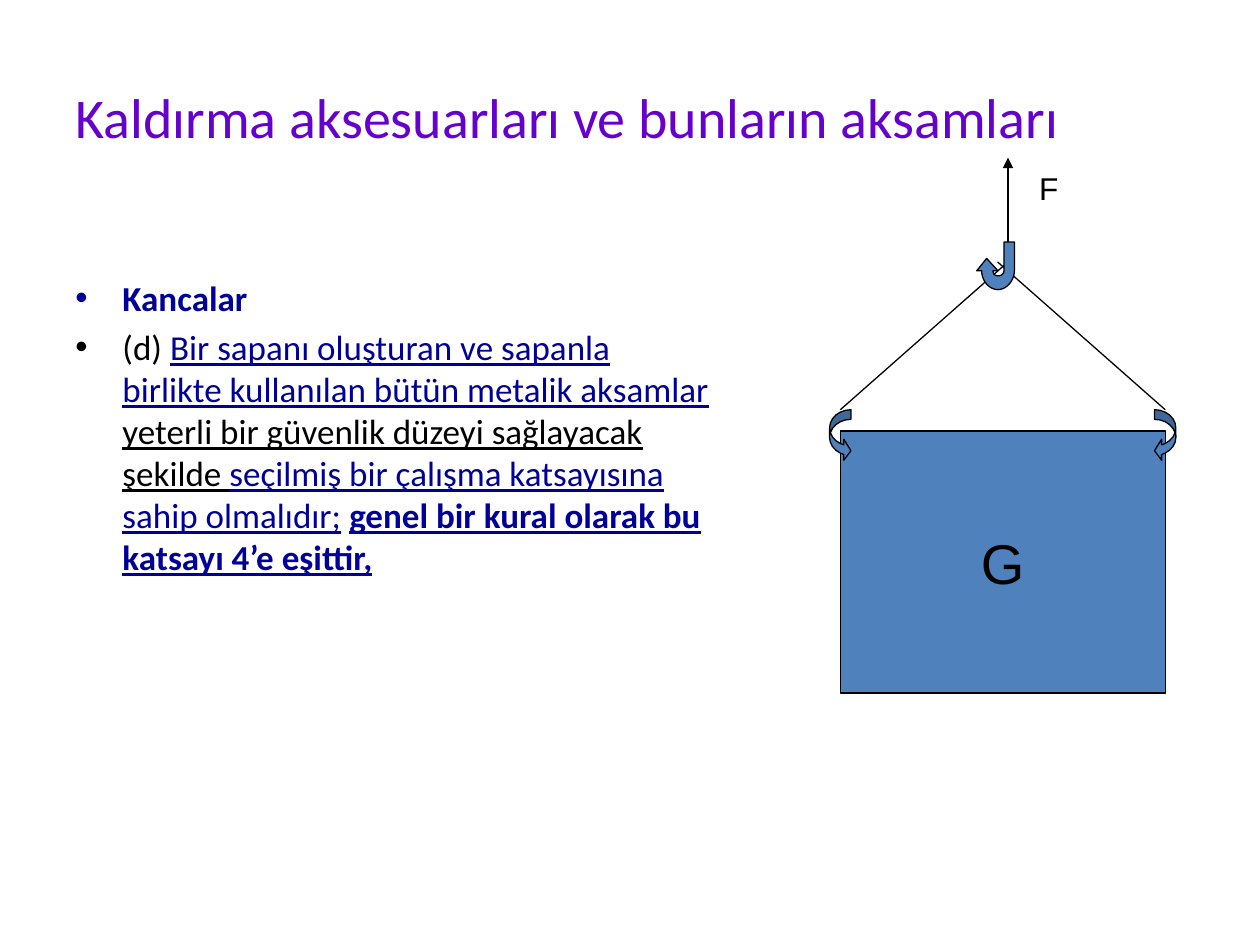
from lxml import etree
from pptx import Presentation
from pptx.dml.color import RGBColor
from pptx.enum.shapes import MSO_CONNECTOR, MSO_SHAPE
from pptx.enum.text import MSO_ANCHOR, MSO_AUTO_SIZE, PP_ALIGN
from pptx.oxml.ns import qn
from pptx.util import Cm, Pt

LINE = MSO_CONNECTOR.STRAIGHT
BOX, CURVE = MSO_SHAPE.FLOWCHART_PROCESS, MSO_SHAPE.CURVED_RIGHT_ARROW
MIDDLE, TOP = MSO_ANCHOR.MIDDLE, MSO_ANCHOR.TOP
LEFT, CENTER = PP_ALIGN.LEFT, PP_ALIGN.CENTER
FIT = MSO_AUTO_SIZE.SHAPE_TO_FIT_TEXT
BLACK, NAVY, VIOLET, BLUE = "000000", "000099", "6600CC", "4F81BD"

TITLE = "Kaldırma aksesuarları ve bunların aksamları"
BODY = [
    [("Kancalar", NAVY, True, False)],
    [
        ("(d) ", BLACK, False, False),
        ("Bir sapanı oluşturan ve sapanla birlikte kullanılan bütün metalik aksamlar",
         NAVY, False, True),
        (" yeterli bir güvenlik düzeyi sağlayacak şekilde ", BLACK, False, True),
        ("seçilmiş bir çalışma katsayısına sahip olmalıdır;", NAVY, False, True),
        (" ", NAVY, False, False),
        ("genel bir kural olarak bu katsayı 4’e eşittir,", NAVY, True, True),
    ],
]
LOAD = (16.94, 8.69, 6.55, 5.28)
GRIP = (0.43, 1.04)
GRIP_TOP = 8.26
BENDS = (0.452, 0.988, 0.333)
ROPE_END, ROPE_TOP = 3.38, 5.28
PULL = (20.32, 4.88, 20.32, 3.18)
HOOK = [
    (19.89, 5.21), (19.69, 5.46), (19.79, 5.46),
    (19.79, 5.66, 19.94, 5.84, 20.12, 5.84),
    (20.29, 5.84, 20.45, 5.66, 20.45, 5.46),
    (20.45, 4.88), (20.24, 4.88), (20.24, 5.46),
    (20.24, 5.51, 20.19, 5.56, 20.14, 5.56), (20.12, 5.56),
    (20.04, 5.56, 20.02, 5.51, 20.02, 5.46), (20.12, 5.46),
]


def color(code):
    return RGBColor.from_string(code)


def place(shape, *spot):
    shape.left, shape.top, shape.width, shape.height = map(Cm, spot)


def add_run(para, text, size, face, code, bold=False, under=False):
    run = para.add_run()
    run.text = text
    font = run.font
    font.size, font.name = Pt(size), face
    font.bold, font.underline = bold, under
    font.color.rgb = color(code)


def label(shape, text, size, face, code, align, anchor, wrap):
    frame = shape.text_frame
    frame.word_wrap, frame.vertical_anchor = wrap, anchor
    para = frame.paragraphs[0]
    para.alignment = align
    add_run(para, text, size, face, code)


def paint(shape):
    shape.shadow.inherit = False
    shape.fill.solid()
    shape.fill.fore_color.rgb = color(BLUE)
    shape.line.color.rgb = color(BLACK)
    shape.line.width = Pt(0.75)


def add_line(shapes, *ends, head=False):
    line = shapes.add_connector(LINE, *map(Cm, ends))
    line.line.color.rgb = color(BLACK)
    line.line.width = Pt(0.75)
    if head:
        etree.SubElement(line.line._get_or_add_ln(), qn("a:tailEnd"), type="triangle")
    etree.SubElement(line._element.spPr, qn("a:effectLst"))


def add_bullet(para):
    props = para._p.get_or_add_pPr()
    props.set("marL", str(Cm(0.95)))
    props.set("indent", str(-Cm(0.95)))
    etree.SubElement(props, qn("a:buFont"), typeface="Arial")
    etree.SubElement(props, qn("a:buChar"), char="•")


def trace(steps, parts=10):
    spots = []
    for step in steps:
        if len(step) == 2:
            spots.append(step)
            continue
        knots = [spots[-1], step[:2], step[2:4], step[4:]]
        for n in range(1, parts + 1):
            t = n / parts
            u = 1 - t
            mix = (u ** 3, 3 * u * u * t, 3 * u * t * t, t ** 3)
            spots.append(tuple(sum(w * k[i] for w, k in zip(mix, knots)) for i in (0, 1)))
    return [(Cm(x), Cm(y)) for x, y in spots]


def add_body(shapes):
    box = shapes.add_textbox(Cm(1.27), Cm(4.45), Cm(13.34), Cm(12.57))
    frame = box.text_frame
    frame.word_wrap = True
    frame.margin_top = Cm(1.13)
    for i, runs in enumerate(BODY):
        para = frame.add_paragraph() if i else frame.paragraphs[0]
        add_bullet(para)
        if i:
            para.space_before = Pt(4)
        for text, code, bold, under in runs:
            add_run(para, text, 20, "Calibri", code, bold, under)


def add_lift(shapes):
    x, y, w, h = LOAD
    load = shapes.add_shape(BOX, *map(Cm, LOAD))
    paint(load)
    label(load, "G", 32, "Arial", BLACK, CENTER, MIDDLE, False)
    for side in (x, x + w):
        grip = shapes.add_shape(CURVE, Cm(side - GRIP[0] / 2), Cm(GRIP_TOP), *map(Cm, GRIP))
        paint(grip)
        for i, bend in enumerate(BENDS):
            grip.adjustments[i] = bend
        if side > x:
            grip._element.spPr.xfrm.set("flipH", "1")
    for side, way in ((x, 1), (x + w, -1)):
        add_line(shapes, side, GRIP_TOP, side + way * ROPE_END, ROPE_TOP)
    first, *rest = trace(HOOK)
    path = shapes.build_freeform(*first)
    path.add_line_segments(rest, close=True)
    paint(path.convert_to_shape())
    add_line(shapes, *PULL, head=True)
    force = shapes.add_textbox(Cm(20.7), Cm(3.28), Cm(0.89), Cm(1.02))
    label(force, "F", 18, "Arial", BLACK, LEFT, TOP, False)
    force.text_frame.auto_size = FIT


def main():
    deck = Presentation()
    deck.slide_width, deck.slide_height = Cm(25.4), Cm(19.05)
    slide = deck.slides.add_slide(deck.slide_layouts[5])
    title = slide.shapes.title
    place(title, 1.27, 0.76, 22.86, 3.18)
    label(title, TITLE, 32, "Calibri", VIOLET, LEFT, MIDDLE, True)
    add_body(slide.shapes)
    add_lift(slide.shapes)
    deck.save("out.pptx")


if __name__ == "__main__":
    main()
